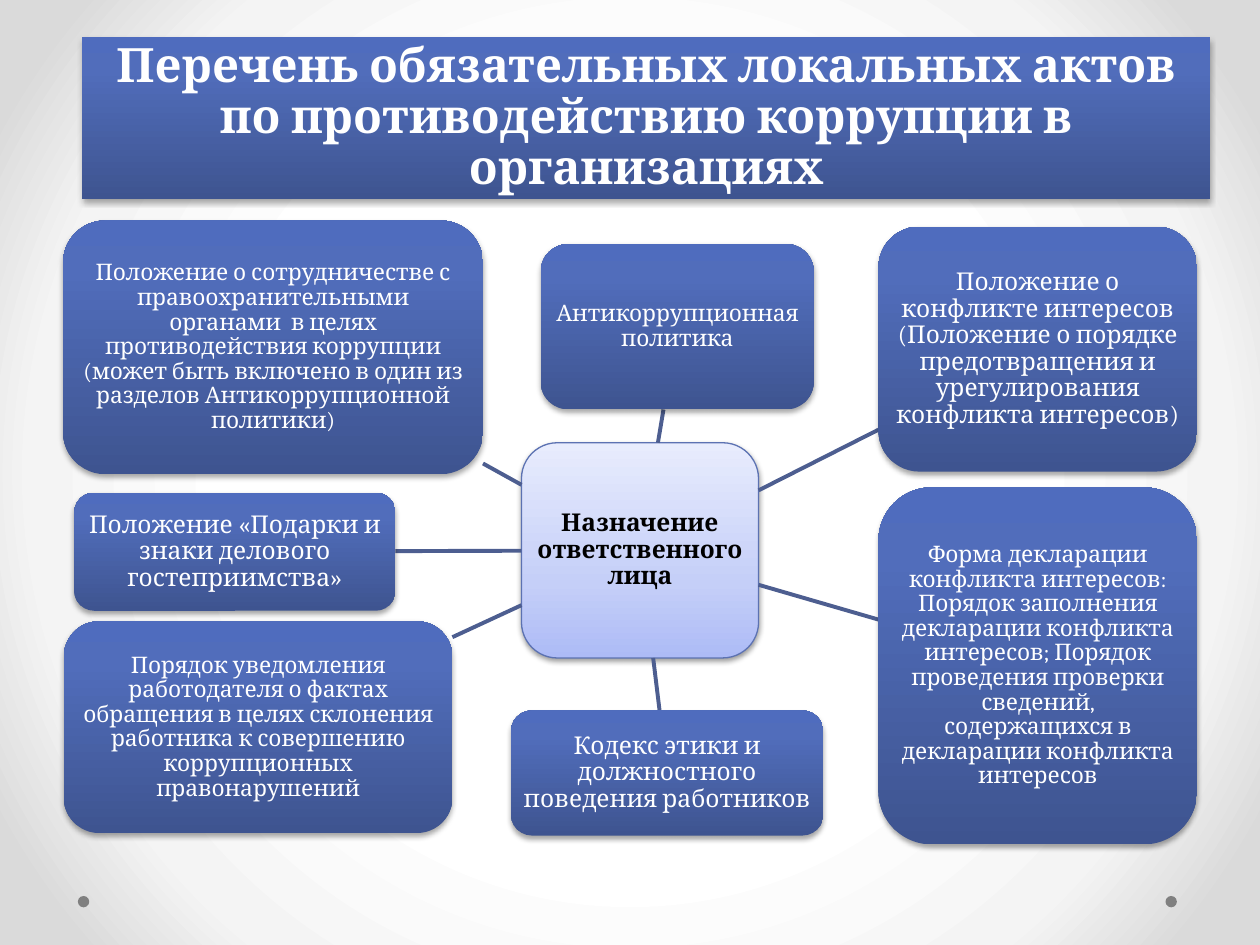
from lxml import etree
from pptx import Presentation
from pptx.dml.color import RGBColor
from pptx.enum.shapes import MSO_CONNECTOR, MSO_SHAPE
from pptx.enum.text import MSO_ANCHOR, MSO_AUTO_SIZE, PP_ALIGN
from pptx.oxml import parse_xml
from pptx.oxml.ns import nsdecls, qn
from pptx.util import Pt

# Content: text, font size, (left, top, width, height) in points
TITLE = "Перечень обязательных локальных актов по противодействию коррупции в организациях"
TITLE_BOX = (47, 21, 644.5, 93)
HUB = ("Назначение ответственного лица", 14, (298, 253, 135.5, 123))
ACTS = [
    ("Антикоррупционная политика", 13, (309, 139.5, 156, 94.5)),
    ("Положение о конфликте интересов (Положение о порядке предотвращения "
     "и урегулирования конфликта интересов)", 14, (502, 129.5, 182, 140)),
    ("Форма декларации конфликта интересов: Порядок заполнения декларации "
     "конфликта интересов; Порядок проведения проверки сведений, содержащихся "
     "в декларации конфликта интересов", 13, (502, 278.5, 182, 204)),
    ("Кодекс этики и должностного поведения работников", 14, (292, 406, 178.5, 71.5)),
    ("Порядок уведомления работодателя о фактах обращения в целях склонения "
     "работника к совершению коррупционных правонарушений", 13, (36.5, 355, 222, 121)),
    ("Положение «Подарки и знаки делового гостеприимства»", 14, (42.5, 281.5, 183.5, 67.5)),
    ("Положение о сотрудничестве с правоохранительными органами  в целях "
     "противодействия коррупции (может быть включено в один из разделов "
     "Антикоррупционной политики)", 13, (36, 126, 240, 145)),
]
DOTS = [(44.5, 512), (666, 512)]
DOT_SIZE = 6.5

# Style
FONT = "Cambria"
BLUE = [(0, "3E5490"), (80, "516DBB"), (100, "4F6CBE")]
PALE = [(0, "ADBBF6"), (35, "C5CFF8"), (100, "E8ECFD")]
BACKDROP = [(50, "FFFFFF"), (76, "F4F4F4"), (92, "DADADA")]
UPWARD = '<a:lin ang="16200000" scaled="0"/>'
RADIAL = ('<a:path path="circle"><a:fillToRect l="50000" t="50000" '
          'r="50000" b="50000"/></a:path>')


def rgb(value):
    return RGBColor.from_string(value)


def set_gradient(fill, parent, stops, direction):
    fill.solid()
    gs = "".join(f'<a:gs pos="{pos * 1000}"><a:srgbClr val="{color}"/></a:gs>'
                 for pos, color in stops)
    grad = parse_xml(f'<a:gradFill {nsdecls("a")} rotWithShape="1">'
                     f'<a:gsLst>{gs}</a:gsLst>{direction}</a:gradFill>')
    parent.replace(parent.find(qn("a:solidFill")), grad)


def set_shadow(sp, alpha, dist):
    sp.shadow.inherit = False
    effects = sp._element.spPr.find(qn("a:effectLst"))
    effects.append(parse_xml(
        f'<a:outerShdw {nsdecls("a")} blurRad="{Pt(3.1)}" dist="{Pt(dist)}" '
        f'dir="5400000" rotWithShape="0"><a:srgbClr val="000000">'
        f'<a:alpha val="{alpha * 1000}"/></a:srgbClr></a:outerShdw>'))


def place(sp, box):
    sp.left, sp.top, sp.width, sp.height = map(Pt, box)


def write(sp, text, size, color, bold, margin):
    tf = sp.text_frame
    tf.word_wrap = True
    tf.auto_size = MSO_AUTO_SIZE.NONE
    tf.vertical_anchor = MSO_ANCHOR.MIDDLE
    tf.margin_left = tf.margin_right = tf.margin_top = tf.margin_bottom = Pt(margin)
    p = tf.paragraphs[0]
    p.text = text
    p.alignment = PP_ALIGN.CENTER
    p.line_spacing = 0.9
    p.font.name, p.font.size, p.font.bold = FONT, Pt(size), bold
    p.font.color.rgb = rgb(color)


def add_card(s, text, size, box, stops=BLUE, color="FFFFFF", bold=False, shadow=(35, 1.8)):
    sp = s.shapes.add_shape(MSO_SHAPE.ROUNDED_RECTANGLE, *map(Pt, box))
    set_gradient(sp.fill, sp._element.spPr, stops, UPWARD)
    sp.line.fill.background()
    set_shadow(sp, *shadow)
    write(sp, text, size, color, bold, 3)
    return sp


def center(box):
    x, y, w, h = box
    return x + w / 2, y + h / 2


def edge_point(box, other):
    """Where the line between two box centres leaves the first box."""
    (x, y), (ox, oy) = center(box), center(other)
    dx, dy = ox - x, oy - y
    scale = min(half / abs(d) for half, d in ((box[2] / 2, dx), (box[3] / 2, dy)) if d)
    return x + dx * scale, y + dy * scale


def add_link(s, start, end):
    points = edge_point(start, end) + edge_point(end, start)
    line = s.shapes.add_connector(MSO_CONNECTOR.STRAIGHT, *map(Pt, points))
    line.line.color.rgb = rgb("4D5E90")
    line.line.width = Pt(2.25)
    etree.SubElement(line._element.spPr, qn("a:effectLst"))


def main():
    prs = Presentation()
    prs.slide_width, prs.slide_height = Pt(720), Pt(540)
    s = prs.slides.add_slide(prs.slide_layouts[5])

    # Background and corner dots
    fill = s.background.fill
    fill.solid()
    set_gradient(fill, s._element.cSld.find(qn("p:bg")).find(qn("p:bgPr")), BACKDROP, RADIAL)
    for x, y in DOTS:
        dot = s.shapes.add_shape(MSO_SHAPE.OVAL, Pt(x), Pt(y), Pt(DOT_SIZE), Pt(DOT_SIZE))
        dot.fill.solid()
        dot.fill.fore_color.rgb = rgb("808080")
        dot.line.fill.background()
        dot.shadow.inherit = False

    # Title banner
    title = s.shapes.title
    place(title, TITLE_BOX)
    set_gradient(title.fill, title._element.spPr, BLUE, UPWARD)
    set_shadow(title, 35, 1.8)
    write(title, TITLE, 27, "FFFFFF", True, 8)

    # Hub with the acts linked around it
    hub = add_card(s, *HUB, stops=PALE, color="000000", bold=True, shadow=(38, 1.6))
    hub.line.color.rgb = rgb("5C72B2")
    hub.line.width = Pt(0.75)
    for text, size, box in ACTS:
        add_link(s, HUB[2], box)
        add_card(s, text, size, box)

    prs.save("out.pptx")


if __name__ == "__main__":
    main()
